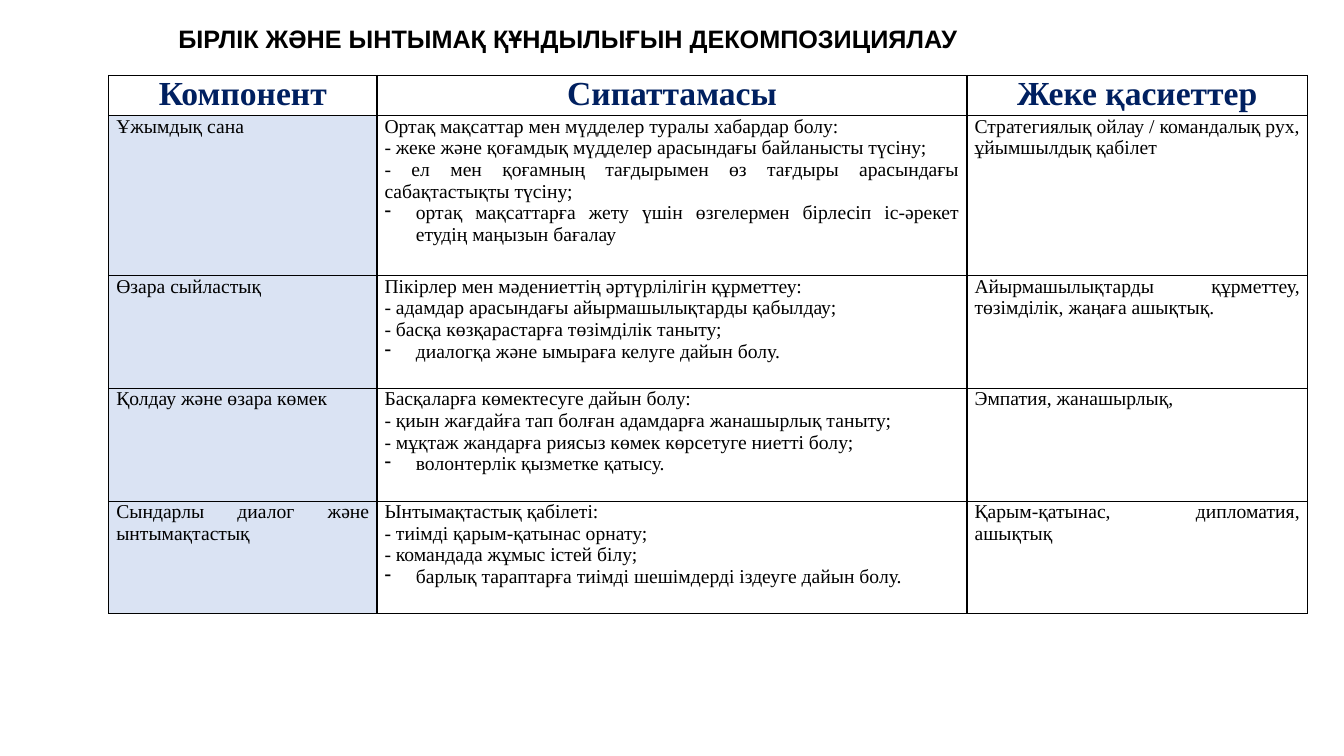
from lxml import etree
from pptx import Presentation
from pptx.dml.color import RGBColor
from pptx.enum.text import MSO_ANCHOR, MSO_AUTO_SIZE, PP_ALIGN
from pptx.oxml import parse_xml
from pptx.oxml.ns import nsdecls, qn
from pptx.util import Cm, Pt

LEFT, CENTER, JUSTIFY = PP_ALIGN.LEFT, PP_ALIGN.CENTER, PP_ALIGN.JUSTIFY
TOP = MSO_ANCHOR.TOP
GROW = MSO_AUTO_SIZE.SHAPE_TO_FIT_TEXT

BLACK = RGBColor(0x00, 0x00, 0x00)
NAVY = RGBColor(0x00, 0x20, 0x60)
PALE_BLUE = RGBColor(0xDA, 0xE3, 0xF3)

TITLE_FONT = {"name": "Arial", "size": Pt(18), "bold": True}
HEADER_FONT = {"name": "Times New Roman", "size": Pt(24), "bold": True}
BODY_FONT = {"name": "Times New Roman", "size": Pt(14), "bold": False}
CELL_FORMAT = {"margin_left": Cm(0.19), "margin_right": Cm(0.19),
               "margin_top": 0, "margin_bottom": 0, "vertical_anchor": TOP}
BULLET_INDENT = Cm(0.79)

TITLE = "БІРЛІК ЖӘНЕ ЫНТЫМАҚ ҚҰНДЫЛЫҒЫН ДЕКОМПОЗИЦИЯЛАУ"
HEADERS = ["Компонент", "Сипаттамасы", "Жеке қасиеттер"]
# The last line of each description is a hanging bullet.
COMPONENTS = [
    ("Ұжымдық сана",
     ["Ортақ мақсаттар мен мүдделер туралы хабардар болу:",
      "- жеке және қоғамдық мүдделер арасындағы байланысты түсіну;",
      "- ел мен қоғамның тағдырымен өз тағдыры арасындағы сабақтастықты түсіну;",
      "ортақ мақсаттарға жету үшін өзгелермен бірлесіп іс-әрекет етудің маңызын бағалау"],
     "Стратегиялық ойлау / командалық рух, ұйымшылдық қабілет"),
    ("Өзара сыйластық",
     ["Пікірлер мен мәдениеттің әртүрлілігін құрметтеу:",
      "- адамдар арасындағы айырмашылықтарды қабылдау;",
      "- басқа көзқарастарға төзімділік таныту;",
      "диалогқа және ымыраға келуге дайын болу."],
     "Айырмашылықтарды құрметтеу, төзімділік, жаңаға ашықтық."),
    ("Қолдау және өзара көмек",
     ["Басқаларға көмектесуге дайын болу:",
      "- қиын жағдайға тап болған адамдарға жанашырлық таныту;",
      "- мұқтаж жандарға риясыз көмек көрсетуге ниетті болу;",
      "волонтерлік қызметке қатысу."],
     "Эмпатия, жанашырлық,"),
    ("Сындарлы диалог және ынтымақтастық",
     ["Ынтымақтастық қабілеті:",
      "- тиімді қарым-қатынас орнату;",
      "- командада жұмыс істей білу;",
      "барлық тараптарға тиімді шешімдерді іздеуге дайын болу."],
     "Қарым-қатынас, дипломатия, ашықтық"),
]
COLUMN_WIDTHS = [Cm(6.76), Cm(14.87), Cm(8.58)]
ROW_HEIGHTS = [Cm(1.01), Cm(4.03)] + [Cm(2.84)] * 3


def apply(target, values):
    for name, value in values.items():
        setattr(target, name, value)


class SlideBuilder:
    def __init__(self, slide):
        self.slide = slide

    def fill_text(self, frame, lines, font, color, alignment):
        frame.text = "\n".join(lines)
        for paragraph in frame.paragraphs:
            paragraph.alignment = alignment
            for run in paragraph.runs:
                apply(run.font, font)
                run.font.color.rgb = color

    def title(self, text):
        heading = self.slide.shapes.title
        apply(heading, {"left": Cm(4.24), "top": Cm(0.46),
                        "width": Cm(24.08), "height": Cm(1.02)})
        apply(heading.text_frame, {"word_wrap": True, "auto_size": GROW,
                                   "vertical_anchor": TOP})
        self.fill_text(heading.text_frame, [text], TITLE_FONT, BLACK, LEFT)

    def border(self, cell):
        properties = cell._tc.get_or_add_tcPr()
        for side in ("lnL", "lnR", "lnT", "lnB"):
            properties.append(parse_xml(
                f'<a:{side} {nsdecls("a")} w="{Pt(1)}"><a:solidFill>'
                f'<a:srgbClr val="{BLACK}"/></a:solidFill></a:{side}>'))

    def bullet(self, paragraph):
        properties = paragraph._p.get_or_add_pPr()
        properties.set("marL", str(BULLET_INDENT))
        properties.set("indent", str(-BULLET_INDENT))
        etree.SubElement(properties, qn("a:buChar")).set("char", "-")

    def cell(self, cell, lines, font, color, alignment, fill=None):
        apply(cell, CELL_FORMAT)
        self.border(cell)
        if fill is None:
            cell.fill.background()
        else:
            cell.fill.solid()
            cell.fill.fore_color.rgb = fill
        self.fill_text(cell.text_frame, lines, font, color, alignment)

    def table(self, headers, components):
        table = self.slide.shapes.add_table(
            len(components) + 1, len(headers), Cm(2.74), Cm(1.9),
            sum(COLUMN_WIDTHS), sum(ROW_HEIGHTS)).table
        apply(table, {"first_row": False, "horz_banding": False})
        for column, width in zip(table.columns, COLUMN_WIDTHS):
            column.width = width
        for row, height in zip(table.rows, ROW_HEIGHTS):
            row.height = height

        for column, header in enumerate(headers):
            self.cell(table.cell(0, column), [header], HEADER_FONT, NAVY, CENTER)
        for row, (component, description, qualities) in enumerate(components, 1):
            contents = ([component], description, [qualities])
            for column, lines in enumerate(contents):
                self.cell(table.cell(row, column), lines, BODY_FONT, BLACK, JUSTIFY,
                          PALE_BLUE if column == 0 else None)
            self.bullet(table.cell(row, 1).text_frame.paragraphs[-1])


def main():
    presentation = Presentation()
    apply(presentation, {"slide_width": Cm(33.87), "slide_height": Cm(19.05)})
    title_only = presentation.slide_layouts[5]
    builder = SlideBuilder(presentation.slides.add_slide(title_only))
    builder.title(TITLE)
    builder.table(HEADERS, COMPONENTS)
    presentation.save("out.pptx")


if __name__ == "__main__":
    main()
